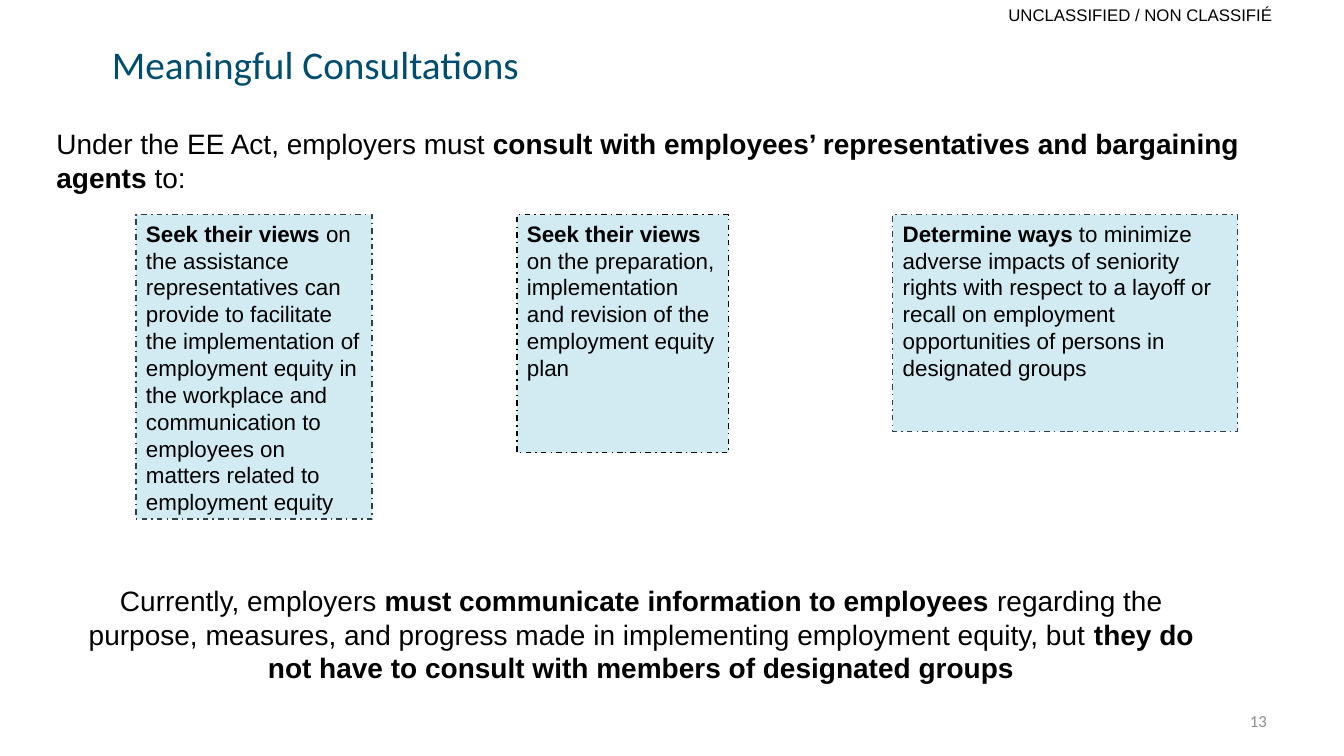
from pptx import Presentation
from pptx.dml.color import RGBColor
from pptx.enum.dml import MSO_LINE
from pptx.enum.shapes import MSO_SHAPE
from pptx.enum.text import MSO_ANCHOR, PP_ALIGN
from pptx.util import Cm, Pt

LEFT, CENTER, RIGHT = PP_ALIGN.LEFT, PP_ALIGN.CENTER, PP_ALIGN.RIGHT
TOP, MIDDLE = MSO_ANCHOR.TOP, MSO_ANCHOR.MIDDLE
RECTANGLE, DASH_DOT = MSO_SHAPE.RECTANGLE, MSO_LINE.DASH_DOT

# Content: each text is a list of (words, bold) runs
CLASSIFICATION = [("UNCLASSIFIED / NON CLASSIFIÉ", False)]
TITLE = [("Meaningful Consultations", False)]
INTRO = [
    ("Under the EE Act, employers must ", False),
    ("consult with employees’ representatives and bargaining agents ", True),
    ("to:", False),
]
# Duties: left, width, height (cm), outline colour, text
DUTIES = [
    (3.43, 5.95, 7.67, "slate", [
        ("Seek their views ", True),
        ("on the assistance representatives can provide to facilitate the "
         "implementation of employment equity in the workplace and communication "
         "to employees on matters related to employment equity", False)]),
    (13.03, 5.33, 6, "black", [
        ("Seek their views ", True),
        ("on the preparation, implementation and revision of the employment "
         "equity plan", False)]),
    (22.5, 8.69, 5.46, "slate", [
        ("Determine ways", True),
        (" to minimize adverse impacts of seniority rights with respect to a "
         "layoff or recall on employment opportunities of persons in designated "
         "groups", False)]),
]
CURRENT_RULE = [
    ("Currently, employers ", False),
    ("must communicate information to employees ", True),
    ("regarding the purpose, measures, and progress made in implementing "
     "employment equity, but ", False),
    ("they do not have to consult with members of designated groups", True),
]
PAGE_NUMBER = [("13", False)]

THEME = {
    "black": RGBColor(0x00, 0x00, 0x00),
    "slate": RGBColor(0x33, 0x3E, 0x48),
    "navy": RGBColor(0x00, 0x4D, 0x71),
    "gray": RGBColor(0x8C, 0x8C, 0x8C),
    "pale_blue": RGBColor(0xD2, 0xEB, 0xF3),
    "body_font": "Arial",
    "title_font": "Calibri",
    "title": Pt(28),
    "body": Pt(20),
    "duty": Pt(16),
    "small": Pt(12),
    "outline": Pt(1),
}
DUTY_TOP = 5.41
INSET_X, INSET_Y = 0.25, 0.13


def write(shape, runs, size="body", font="body_font", color="black",
          align=LEFT, anchor=TOP, inset=True):
    frame = shape.text_frame
    frame.word_wrap = True
    frame.vertical_anchor = anchor
    frame.margin_left = frame.margin_right = Cm(INSET_X if inset else 0)
    frame.margin_top = frame.margin_bottom = Cm(INSET_Y if inset else 0)
    paragraph = frame.paragraphs[0]
    paragraph.alignment = align
    for words, bold in runs:
        run = paragraph.add_run()
        run.text = words
        run.font.name = THEME[font]
        run.font.size = THEME[size]
        run.font.bold = bold
        run.font.color.rgb = THEME[color]


def main():
    deck = Presentation()
    deck.slide_width, deck.slide_height = Cm(33.87), Cm(19.05)
    shapes = deck.slides.add_slide(deck.slide_layouts[6]).shapes

    def text_box(left, top, width, height):
        return shapes.add_textbox(Cm(left), Cm(top), Cm(width), Cm(height))

    # Header
    write(text_box(23.62, 0.13, 10.24, 0.51), CLASSIFICATION, size="small",
          align=CENTER, anchor=MIDDLE, inset=False)
    write(text_box(2.82, 0.38, 20.12, 2.44), TITLE, size="title",
          font="title_font", color="navy", anchor=MIDDLE, inset=False)
    write(text_box(1.17, 3.07, 31.22, 1.96), INTRO)

    # Duties to consult
    for left, width, height, outline, runs in DUTIES:
        duty = shapes.add_shape(RECTANGLE, Cm(left), Cm(DUTY_TOP),
                                Cm(width), Cm(height))
        duty.shadow.inherit = False
        duty.fill.solid()
        duty.fill.fore_color.rgb = THEME["pale_blue"]
        duty.line.color.rgb = THEME[outline]
        duty.line.width = THEME["outline"]
        duty.line.dash_style = DASH_DOT
        write(duty, runs, size="duty")

    # Current rule and page number
    write(text_box(1.9, 14.58, 28.52, 2.82), CURRENT_RULE, align=CENTER)
    write(text_box(24.28, 17.65, 7.9, 1.02), PAGE_NUMBER, size="small",
          font="title_font", color="gray", align=RIGHT, anchor=MIDDLE)

    deck.save("out.pptx")


if __name__ == "__main__":
    main()
